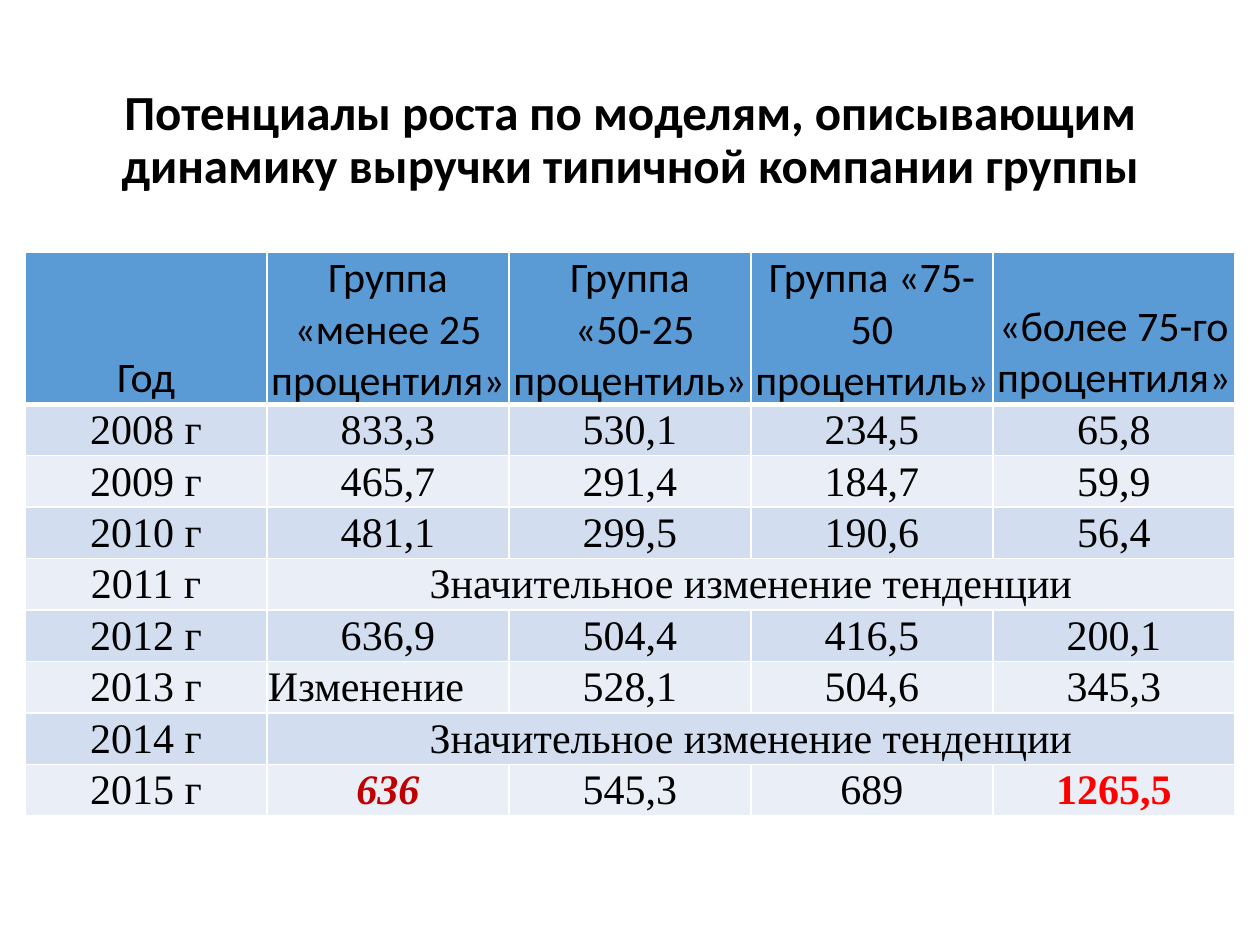
from lxml import etree
from pptx import Presentation
from pptx import util as u
from pptx.dml.color import RGBColor
from pptx.enum import text
from pptx.oxml.ns import qn

TITLE = "Потенциалы роста по моделям, описывающим динамику выручки типичной компании группы"
TREND = "Значительное изменение тенденции"
SHIFT = "Изменение"
HEADER = ["Год", "Группа «менее 25 процентиля»", "Группа\n «50-25 процентиль»",
          "Группа «75-50 процентиль»", "«более 75-го процентиля»"]
YEARS = [
    ["2008 г", "833,3", "530,1", "234,5", "65,8"],
    ["2009 г", "465,7", "291,4", "184,7", "59,9"],
    ["2010 г", "481,1", "299,5", "190,6", "56,4"],
    ["2011 г", TREND],
    ["2012 г", "636,9", "504,4", "416,5", "200,1"],
    ["2013 г", SHIFT, "528,1", "504,6", "345,3"],
    ["2014 г", TREND],
    ["2015 г", "636", "545,3", "689", "1265,5"],
]

BLACK = RGBColor(0, 0, 0)
WHITE = RGBColor(255, 255, 255)
BLUE = RGBColor(0x5B, 0x9B, 0xD5)
BANDS = [RGBColor(0xD2, 0xDE, 0xEF), RGBColor(0xEA, 0xEF, 0xF7)]
EMPHASIS = {
    "636": {"bold": True, "italic": True, "color": RGBColor(0xC0, 0, 0)},
    "1265,5": {"bold": True, "color": RGBColor(255, 0, 0)},
}
PX = u.Inches(1) // 126
COLUMN, HEADER_HEIGHT, ROW_HEIGHT = 242, 102, 51


def px(*lengths):
    return [length * PX for length in lengths]


def set_all(target, values):
    for name, value in values.items():
        setattr(target, name, value)


def write(frame, words, align, size, name, bold=False, italic=False, color=BLACK, spacing=1.0):
    for index, line in enumerate(words.split("\n")):
        para = frame.add_paragraph() if index else frame.paragraphs[0]
        set_all(para, {"alignment": align, "line_spacing": spacing})
        span = para.add_run()
        span.text = line
        set_all(span.font, {"size": u.Pt(size), "name": name, "bold": bold, "italic": italic})
        span.font.color.rgb = color


def add_borders(cell, widths):
    properties = cell._tc.get_or_add_tcPr()
    for index, (side, width) in enumerate(widths.items()):
        line = etree.Element(qn(f"a:ln{side}"), w=str(u.Pt(width)))
        fill = etree.SubElement(line, qn("a:solidFill"))
        etree.SubElement(fill, qn("a:srgbClr"), val=str(WHITE))
        properties.insert(index, line)


def add_title(page):
    box = page.shapes.add_textbox(*px(87, 50, 1086, 183))
    set_all(box.text_frame, {"word_wrap": True, "vertical_anchor": text.MSO_ANCHOR.MIDDLE})
    write(box.text_frame, TITLE, text.PP_ALIGN.CENTER, 28, "Calibri", bold=True, spacing=0.9)


def add_growth_table(page):
    rows = [HEADER] + YEARS
    heights = [HEADER_HEIGHT] + [ROW_HEIGHT] * len(YEARS)
    columns = len(HEADER)
    table = page.shapes.add_table(
        len(rows), columns, *px(25, 252, COLUMN * columns, sum(heights))).table
    for column in table.columns:
        column.width = COLUMN * PX
    for r, (values, height) in enumerate(zip(rows, heights)):
        table.rows[r].height = height * PX
        if len(values) < columns:
            table.cell(r, len(values) - 1).merge(table.cell(r, columns - 1))
        for c in range(columns):
            cell = table.cell(r, c)
            set_all(cell, {
                "margin_left": PX, "margin_right": PX, "margin_top": PX, "margin_bottom": 0,
                "vertical_anchor": text.MSO_ANCHOR.MIDDLE if r else text.MSO_ANCHOR.BOTTOM,
            })
            cell.fill.solid()
            cell.fill.fore_color.rgb = BANDS[(r - 1) % 2] if r else BLUE
            add_borders(cell, {"L": 1, "R": 1, "T": 3 if r == 1 else 1, "B": 1 if r else 3})
            if c < len(values):
                words = values[c]
                align = text.PP_ALIGN.LEFT if words == SHIFT else text.PP_ALIGN.CENTER
                write(cell.text_frame, words, align, 24,
                      "Times New Roman" if r else "Calibri", **EMPHASIS.get(words, {}))


def main():
    deck = Presentation()
    set_all(deck, {"slide_width": u.Inches(10), "slide_height": u.Inches(7.5)})
    page = deck.slides.add_slide(deck.slide_layouts[6])
    add_title(page)
    add_growth_table(page)
    deck.save("out.pptx")


if __name__ == "__main__":
    main()
